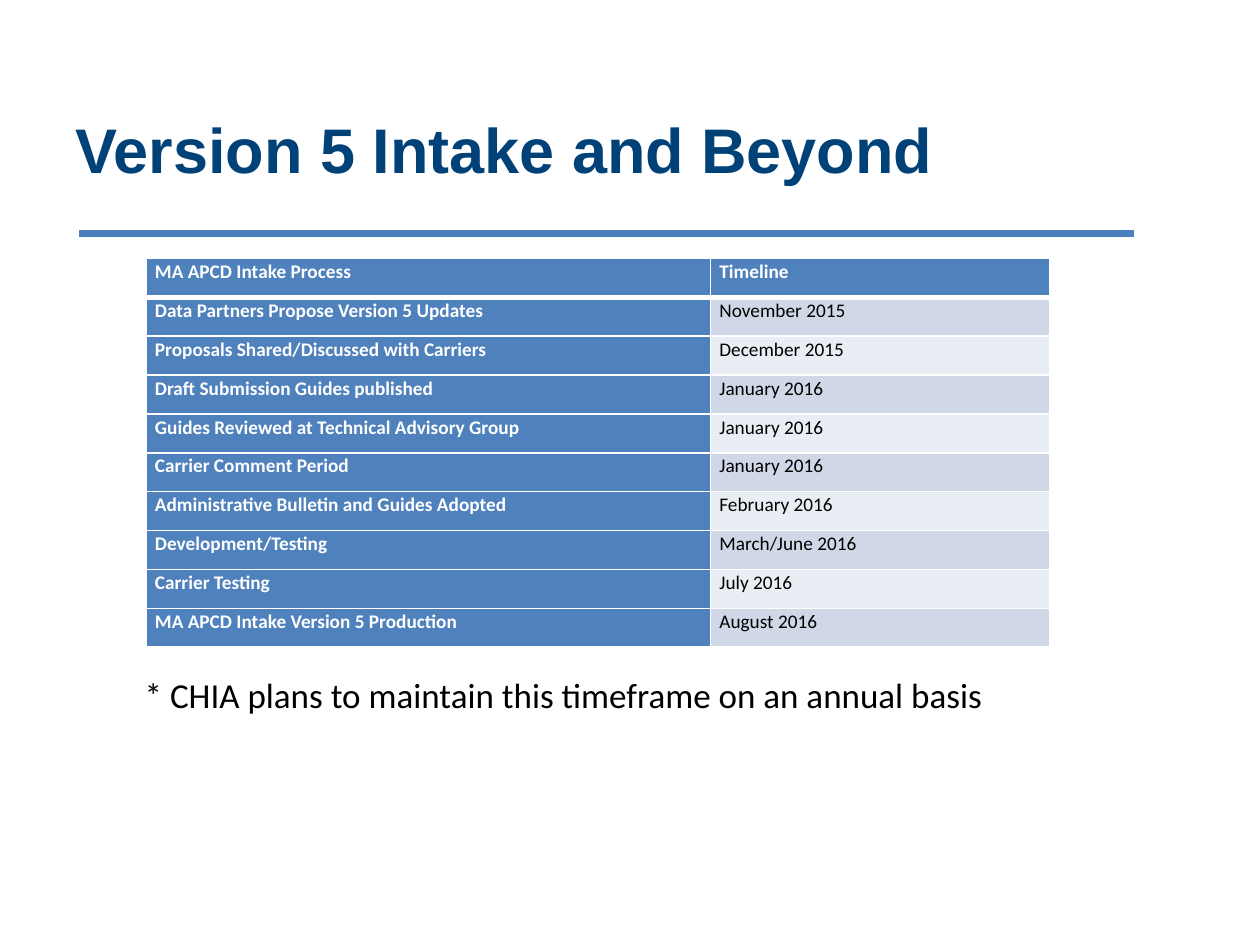
from lxml import etree
from pptx import Presentation
from pptx.dml.color import RGBColor
from pptx.enum.shapes import MSO_CONNECTOR
from pptx.enum.text import MSO_ANCHOR
from pptx.oxml.ns import qn
from pptx.util import Inches, Pt

STRAIGHT = MSO_CONNECTOR.STRAIGHT
MIDDLE, TOP = MSO_ANCHOR.MIDDLE, MSO_ANCHOR.TOP

TITLE = "Version 5 Intake and Beyond"
NOTE = "* CHIA plans to maintain this timeframe on an annual basis"
ROWS = [
    ("MA APCD Intake Process", "Timeline"),
    ("Data Partners Propose Version 5 Updates", "November 2015"),
    ("Proposals Shared/Discussed with Carriers", "December 2015"),
    ("Draft Submission Guides published", "January 2016"),
    ("Guides Reviewed at Technical Advisory Group", "January 2016"),
    ("Carrier Comment Period", "January 2016"),
    ("Administrative Bulletin and Guides Adopted", "February 2016"),
    ("Development/Testing", "March/June 2016"),
    ("Carrier Testing", "July 2016"),
    ("MA APCD Intake Version 5 Production", "August 2016"),
]
COL_WIDTHS = (4.48, 2.69)
TABLE_LEFT, TABLE_TOP, TABLE_HEIGHT = 1.16, 2.05, 3.09
NAVY, RULE, BLUE, WHITE, BLACK = "004178", "4B7EBC", "4F81BD", "FFFFFF", "000000"
BANDS = ("E9EDF4", "D0D8E8")


def rgb(value):
    return RGBColor.from_string(value)


def style(p, font, size, color, bold=False):
    f = p.runs[0].font
    f.name, f.size, f.bold = font, Pt(size), bold
    f.color.rgb = rgb(color)


def add_text(slide, box, text, anchor, *look):
    tf = slide.shapes.add_textbox(*map(Inches, box)).text_frame
    tf.word_wrap = True
    tf.vertical_anchor = anchor
    tf.text = text
    style(tf.paragraphs[0], *look)


def add_borders(cell, widths):
    """Draw white borders; widths maps a side (L, R, T, B) to points."""
    tc_pr = cell._tc.get_or_add_tcPr()
    for side, width in widths.items():
        ln = etree.SubElement(tc_pr, qn(f"a:ln{side}"), w=str(Pt(width)))
        fill = etree.SubElement(ln, qn("a:solidFill"))
        etree.SubElement(fill, qn("a:srgbClr"), val=WHITE)


def add_timeline(slide):
    frame = slide.shapes.add_table(
        len(ROWS), len(COL_WIDTHS), Inches(TABLE_LEFT), Inches(TABLE_TOP),
        Inches(sum(COL_WIDTHS)), Inches(TABLE_HEIGHT))
    table = frame.table
    for column, width in zip(table.columns, COL_WIDTHS):
        column.width = Inches(width)
    for i, row in enumerate(ROWS):
        table.rows[i].height = Inches(TABLE_HEIGHT / len(ROWS))
        for j, text in enumerate(row):
            cell = table.cell(i, j)
            heading = i == 0 or j == 0
            cell.margin_left = cell.margin_right = Inches(0.07)
            cell.margin_top = cell.margin_bottom = 0
            add_borders(cell, {"L": 1, "R": 1, "T": 3 if i == 1 else 1,
                               "B": 3 if i == 0 else 1})
            cell.fill.solid()
            cell.fill.fore_color.rgb = rgb(BLUE if heading else BANDS[i % 2])
            cell.text = text
            p = cell.text_frame.paragraphs[0]
            p.line_spacing = 1.07
            style(p, "Calibri", 11, WHITE if heading else BLACK, heading)


prs = Presentation()
prs.slide_width, prs.slide_height = Inches(10), Inches(7.5)
slide = prs.slides.add_slide(prs.slide_layouts[6])

rule = slide.shapes.add_connector(
    STRAIGHT, Inches(0.63), Inches(1.85), Inches(9), Inches(1.85))
rule.line.color.rgb = rgb(RULE)
rule.line.width = Pt(4)
etree.SubElement(rule._element.spPr, qn("a:effectLst"))

add_text(slide, (0.5, 0.62, 8.5, 1.11), TITLE, MIDDLE, "Arial", 36, NAVY, True)
add_timeline(slide)
add_text(slide, (1.05, 5.3, 7.72, 0.44), NOTE, TOP, "Calibri", 20, BLACK)

prs.save("out.pptx")
